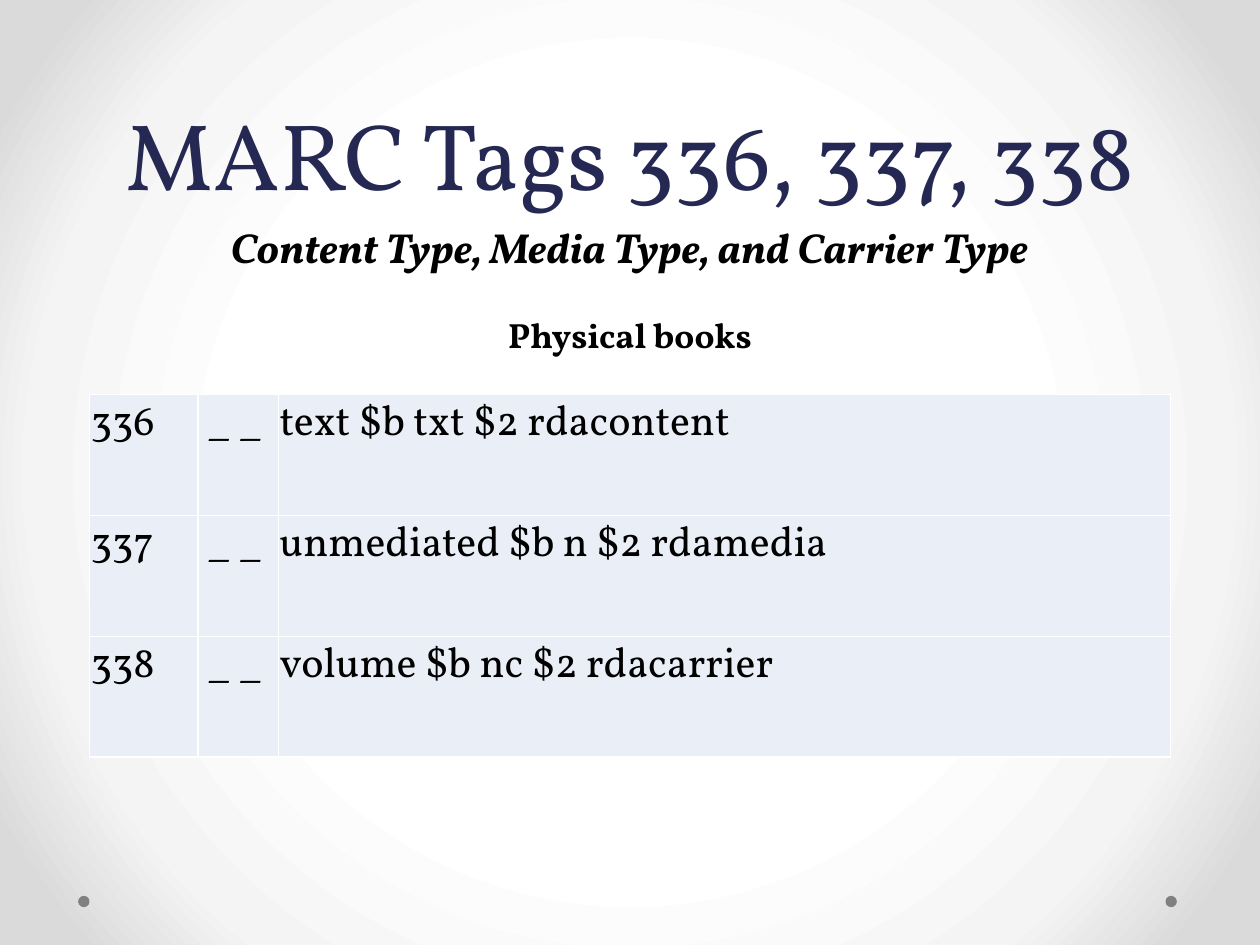
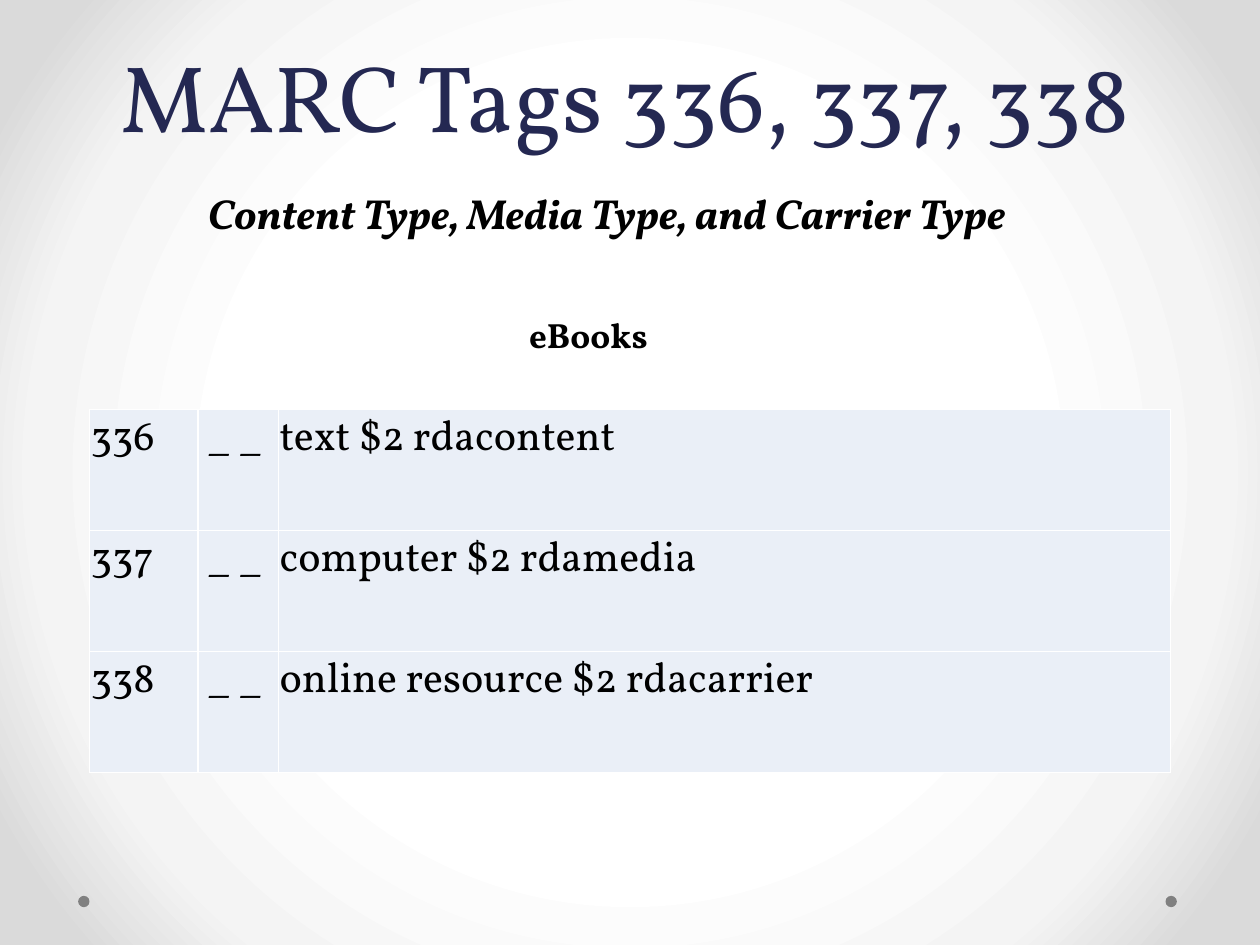
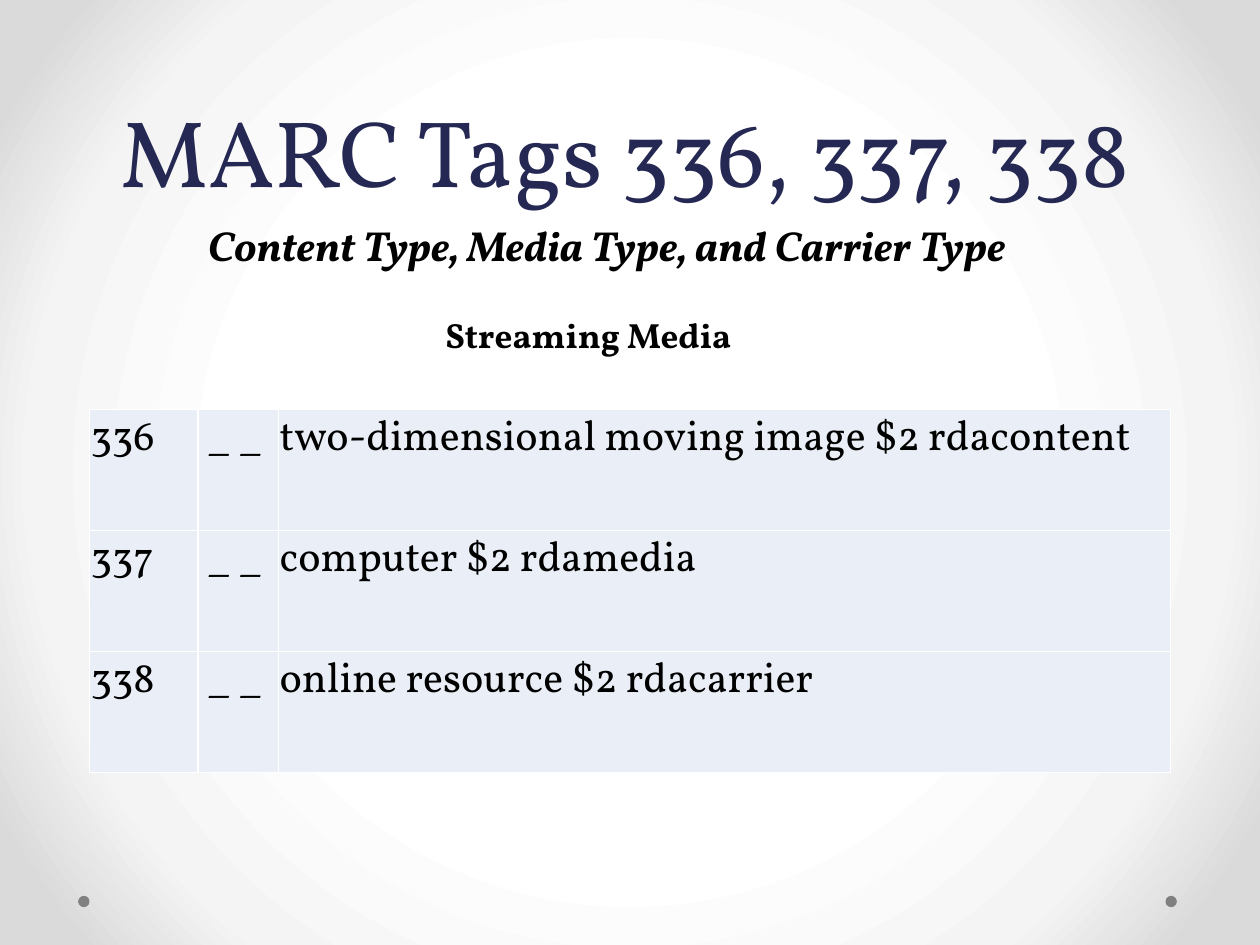
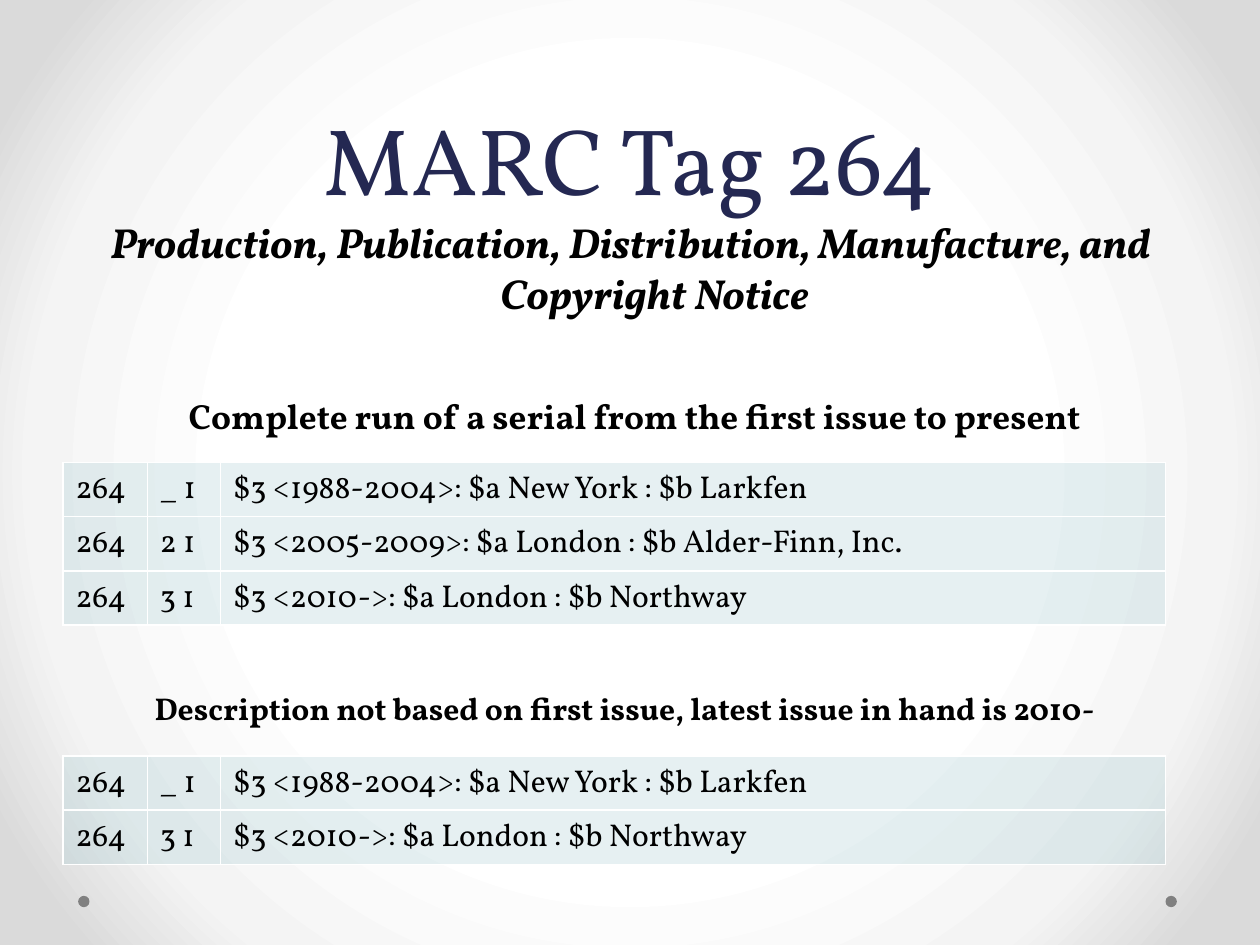
from lxml import etree
from pptx import Presentation
from pptx.dml.color import RGBColor
from pptx.enum.shapes import MSO_SHAPE
from pptx.enum.text import MSO_ANCHOR, MSO_AUTO_SIZE, PP_ALIGN
from pptx.oxml.ns import nsdecls, qn
from pptx.oxml import parse_xml
from pptx.util import Emu, Pt

ELLIPSE = MSO_SHAPE.OVAL
CENTER = PP_ALIGN.CENTER
TOP, BOTTOM = MSO_ANCHOR.TOP, MSO_ANCHOR.BOTTOM
GROW, FIXED = MSO_AUTO_SIZE.SHAPE_TO_FIT_TEXT, MSO_AUTO_SIZE.NONE

EMU_PER_PX = 9144
FONT = "Vollkorn"
NAVY, BLACK, WHITE, GRAY = "242852", "000000", "FFFFFF", "808080"
PALE_BLUE, TEAL = "EAEFF7", "9CC7CE"
BACKDROP_STOPS = ((50, "FFFFFF"), (76, "F4F4F4"), (92, "DADADA"))

TITLE = {"size": Pt(54)}
SUBTITLE = {"size": Pt(24), "bold": True, "italic": True}
CAPTION = {"size": Pt(20), "bold": True}
SMALL_CAPTION = {"size": Pt(18), "bold": True}

TYPE_TABLE = {"columns": (86, 64, 708), "row_height": 96, "size": 24,
              "color": PALE_BLUE, "inset": 1}
IMPRINT_TABLE = {"columns": (67, 58, 750), "row_height": 43, "size": 18,
                 "color": TEAL, "opacity": 25}


def px(length):
    """Turn px into EMU."""
    return Emu(length * EMU_PER_PX)


def rgb(color):
    """Turn a hex string into a colour."""
    return RGBColor.from_string(color)


def assign(target, values):
    """Set every attribute named in a dict of format values."""
    for attribute, value in values.items():
        setattr(target, attribute, value)


class Deck:
    """Holds the shared style and the current slide."""

    def __init__(self):
        """Open a presentation and give its master the backdrop."""
        self.prs = Presentation()
        assign(self.prs, {"slide_width": px(1000), "slide_height": px(750)})
        self.slide = None
        self.backdrop()

    def backdrop(self):
        """Paint a radial gradient on the master."""
        master = self.prs.slide_master
        master.background.fill.solid()
        plain = master.element.xpath(".//p:bgPr/a:solidFill")[0]
        stops = "".join(
            f'<a:gs pos="{pos * 1000}"><a:srgbClr val="{color}"/></a:gs>'
            for pos, color in BACKDROP_STOPS)
        plain.getparent().replace(plain, parse_xml(
            f'<a:gradFill {nsdecls("a")} rotWithShape="1"><a:gsLst>{stops}</a:gsLst>'
            '<a:path path="circle"><a:fillToRect l="50000" t="50000" r="50000" b="50000"/>'
            '</a:path></a:gradFill>'))

    def new_slide(self):
        """Start a slide with its two corner dots."""
        self.slide = self.prs.slides.add_slide(self.prs.slide_layouts[6])
        for left in (925, 62):
            self.dot(left, 711, 9)

    def dot(self, left, top, size):
        """Draw a gray dot."""
        dot = self.slide.shapes.add_shape(
            ELLIPSE, px(left), px(top), px(size), px(size))
        dot.shadow.inherit = False
        dot.fill.solid()
        dot.fill.fore_color.rgb = rgb(GRAY)
        dot.line.fill.background()

    def styled_run(self, paragraph, text, font, color=BLACK):
        """Add a run in the deck's font."""
        run = paragraph.add_run()
        run.text = text
        assign(run.font, {"name": FONT, **font})
        run.font.color.rgb = rgb(color)

    def text(self, text, box, font, color=BLACK, anchor=TOP, fit=GROW, **spacing):
        """Place a centred, wrapping text and return its paragraph."""
        frame = self.slide.shapes.add_textbox(*map(px, box)).text_frame
        assign(frame, {"word_wrap": True, "auto_size": fit, "vertical_anchor": anchor})
        paragraph = frame.paragraphs[0]
        assign(paragraph, {"alignment": CENTER, **spacing})
        self.styled_run(paragraph, text, font, color)
        return paragraph

    def title(self, text, box):
        """Place the slide title at the bottom of its box."""
        self.text(text, box, TITLE, NAVY, BOTTOM, FIXED, line_spacing=Pt(58))

    def hanging_subtitle(self, text, box):
        """Place a subtitle with a hanging indent."""
        paragraph = self.text(text, box, SUBTITLE, fit=FIXED, space_before=Pt(5))
        properties = paragraph._p.get_or_add_pPr()
        for name, indent in (("marL", 38), ("indent", -38)):
            properties.set(name, str(px(indent)))

    def table(self, rows, left, top, columns, row_height, size, color,
              opacity=100, inset=None):
        """Place a table of evenly filled cells with white borders."""
        table = self.slide.shapes.add_table(
            len(rows), len(columns), px(left), px(top),
            px(sum(columns)), px(row_height * len(rows))).table
        assign(table, {"first_row": False, "horz_banding": False})
        for column, width in zip(table.columns, columns):
            column.width = px(width)
        for row, texts in zip(table.rows, rows):
            row.height = px(row_height)
            for cell, text in zip(row.cells, texts):
                if inset is not None:
                    assign(cell, {f"margin_{side}": px(inset)
                                  for side in ("left", "right", "top", "bottom")})
                self.styled_run(cell.text_frame.paragraphs[0], text, {"size": Pt(size)})
                self.paint_cell(cell, color, opacity)

    def paint_cell(self, cell, color, opacity):
        """Fill and outline one cell."""
        cell.fill.solid()
        cell.fill.fore_color.rgb = rgb(color)
        properties = cell._tc.get_or_add_tcPr()
        if opacity < 100:
            tint = properties.find(".//" + qn("a:srgbClr"))
            etree.SubElement(tint, qn("a:alpha")).set("val", str(opacity * 1000))
        for position, side in enumerate(("lnL", "lnR", "lnT", "lnB")):
            properties.insert(position, parse_xml(
                f'<a:{side} {nsdecls("a")} w="{Pt(1)}"><a:solidFill>'
                f'<a:srgbClr val="{WHITE}"/></a:solidFill></a:{side}>'))

    def type_slide(self, material, values, title_at, subtitle_at, caption_left, table_top):
        """Build a slide on the content, media and carrier type of a material."""
        self.new_slide()
        self.title("MARC Tags 336, 337, 338", (*title_at, 892, 125))
        self.text("Content Type, Media Type, and Carrier Type",
                  (*subtitle_at, 703, 50), SUBTITLE)
        self.text(material, (caption_left, 244, 350, 44), CAPTION)
        rows = [(str(tag), " _ _", value) for tag, value in enumerate(values, 336)]
        self.table(rows, 71, table_top, **TYPE_TABLE)

    def imprint_slide(self):
        """Build the slide on publication statements."""
        first = ("264", "_ 1", "$3 <1988-2004>: $a New York : $b Larkfen")
        middle = ("264", "2 1", "$3 <2005-2009>: $a London : $b Alder-Finn, Inc.")
        latest = ("264", "3 1", "$3 <2010->: $a London : $b Northway")
        self.new_slide()
        self.title("MARC Tag 264", (50, 0, 900, 175))
        self.hanging_subtitle(
            "Production, Publication, Distribution, Manufacture, and Copyright Notice",
            (42, 167, 917, 42))
        self.text("Complete run of a serial from the first issue to present",
                  (100, 308, 808, 44), CAPTION)
        self.table((first, middle, latest), 50, 367, **IMPRINT_TABLE)
        self.text("Description not based on first issue, latest issue in hand is 2010-",
                  (75, 542, 842, 40), SMALL_CAPTION)
        self.table((first, latest), 50, 600, **IMPRINT_TABLE)


def main():
    """Build and save the four slides."""
    deck = Deck()
    online = ("computer $2 rdamedia", "online resource $2 rdacarrier")
    deck.type_slide(
        "Physical books",
        ("text $b txt $2 rdacontent", "unmediated $b n $2 rdamedia",
         "volume $b nc $2 rdacarrier"),
        (54, 46), (148, 171), 325, 313)
    deck.type_slide("eBooks", ("text $2 rdacontent", *online),
                    (50, 0), (130, 144), 292, 325)
    deck.type_slide("Streaming Media",
                    ("two-dimensional moving image $2 rdacontent", *online),
                    (50, 44), (130, 169), 292, 325)
    deck.imprint_slide()
    deck.prs.save("out.pptx")


if __name__ == "__main__":
    main()
